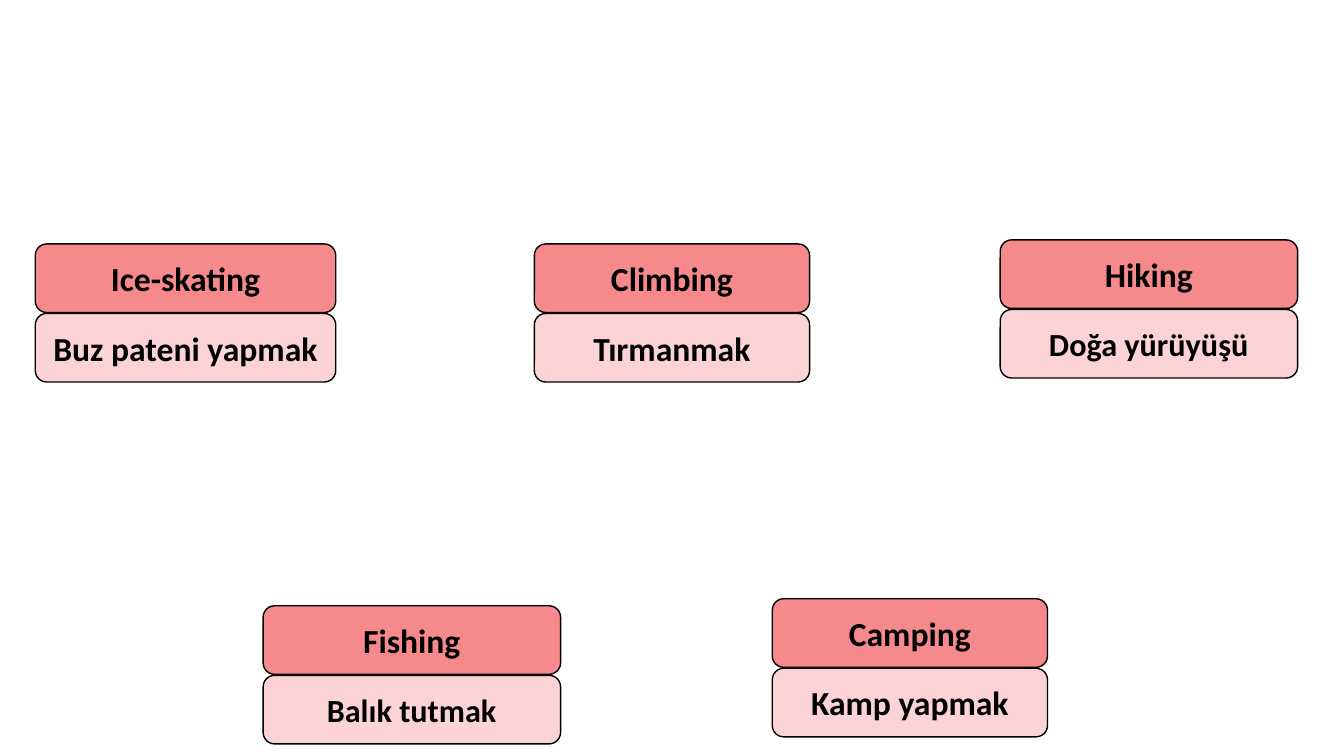
"""Build a slide of outdoor activities paired with their Turkish meanings."""
import pptx
import pptx.util
import pptx.dml.color
import pptx.enum.shapes
import pptx.enum.text

Inches = pptx.util.Inches
COLORS = {"word": "F5898B", "meaning": "FCD3D4", "ink": "000000"}
HEIGHT = 0.68
STEP = 0.69
CARDS = [
    ("Ice-skating", "Buz pateni yapmak", 0.35, 2.42, 2.98, 24),
    ("Climbing", "Tırmanmak", 5.3, 2.42, 2.73, 24),
    ("Hiking", "Doğa yürüyüşü", 9.92, 2.38, 2.95, 23),
    ("Fishing", "Balık tutmak", 2.61, 6.01, 2.95, 23),
    ("Camping", "Kamp yapmak", 7.66, 5.94, 2.73, 24),
]


def color(name):
    return pptx.dml.color.RGBColor.from_string(COLORS[name])


def write(shape, text, size=24, bold=True, ink="ink"):
    frame = shape.text_frame
    frame.word_wrap = True
    frame.vertical_anchor = pptx.enum.text.MSO_ANCHOR.MIDDLE
    line = frame.paragraphs[0]
    line.alignment = pptx.enum.text.PP_ALIGN.CENTER
    run = line.add_run()
    run.text = text
    run.font.name = "Calibri"
    run.font.size = pptx.util.Pt(size)
    run.font.bold = bold
    run.font.color.rgb = color(ink)


def add_box(slide, text, left, top, width, fill, size=24):
    box = slide.shapes.add_shape(
        pptx.enum.shapes.MSO_SHAPE.ROUNDED_RECTANGLE,
        Inches(left), Inches(top), Inches(width), Inches(HEIGHT))
    box.shadow.inherit = False
    box.fill.solid()
    box.fill.fore_color.rgb = color(fill)
    box.line.color.rgb = color("ink")
    box.line.width = pptx.util.Pt(1)
    write(box, text, size=size)


def add_card(slide, word, meaning, left, top, width, size):
    add_box(slide, word, left, top, width, "word")
    add_box(slide, meaning, left, top + STEP, width, "meaning", size=size)


def main():
    deck = pptx.Presentation()
    deck.slide_width = Inches(13.33)
    deck.slide_height = Inches(7.5)
    slide = deck.slides.add_slide(deck.slide_layouts[6])
    for card in CARDS:
        add_card(slide, *card)
    deck.save("out.pptx")


if __name__ == "__main__":
    main()
